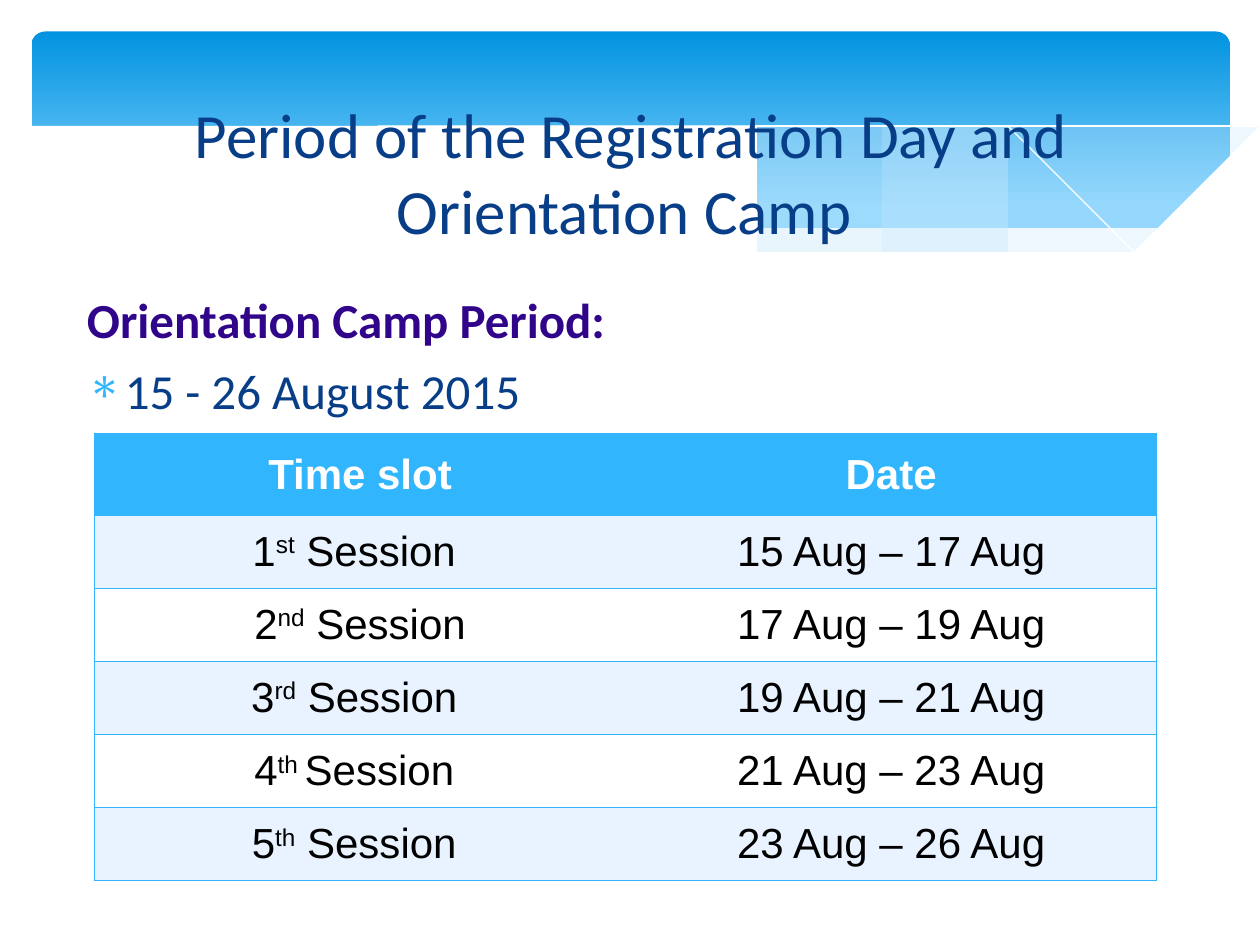
from lxml.etree import SubElement
from pptx import Presentation
from pptx.dml.color import RGBColor
from pptx.enum.shapes import MSO_SHAPE
from pptx.enum.text import MSO_ANCHOR, MSO_AUTO_SIZE, PP_ALIGN
from pptx.oxml.ns import qn
from pptx.util import Inches, Pt

HUES = {"deep": "0293E0", "pale": "83D3FE", "mist": "C6E7FC", "white": "FFFFFF",
        "navy": "073E87", "plum": "310589", "sky": "31B6FD", "ice": "E8F3FF",
        "black": "000000"}

FONTS = {
    "title": {"name": "Calibri", "size": Pt(36), "bold": False, "hue": "navy"},
    "lead": {"name": "Calibri", "size": Pt(28), "bold": True, "hue": "plum"},
    "item": {"name": "Calibri", "size": Pt(28), "bold": False, "hue": "navy"},
    "head": {"name": "Arial", "size": Pt(24), "bold": True, "hue": "white"},
    "cell": {"name": "Arial", "size": Pt(24), "bold": False, "hue": "black"},
}

FAN = [(9.76, 0.94), (9.35, 1.01), (8.61, 1.18), (7.79, 1.37), (7.06, 1.52), (6.61, 1.6)]
FAN_BASE = [(6.61, 1.6), (7.19, 1.67), (7.81, 1.72), (8.35, 1.72), (8.89, 1.66),
            (9.35, 1.56), (9.76, 1.41)]
BAND = [(8.93, 1.67), (8.37, 1.59), (7.41, 1.42), (6.29, 1.16), (5.41, 0.97),
        (4.65, 0.86), (3.99, 0.8), (3.44, 0.8), (2.86, 0.86)]
BAND_BASE = [(2.86, 0.86), (3.62, 0.97), (4.49, 1.16), (5.66, 1.43), (6.5, 1.58),
             (7.22, 1.68), (7.85, 1.72), (8.38, 1.72), (8.93, 1.67)]
ARC = [(3.09, 0.9), (3.53, 0.84), (4.16, 0.81), (4.89, 0.84), (5.82, 0.94),
       (6.95, 1.14), (7.95, 1.36), (9.07, 1.66)]
RISE = [(6.13, 1.51), (6.95, 1.3), (7.76, 1.11), (8.66, 0.93), (9.24, 0.84), (9.75, 0.8)]
SWELL = [(9.77, 1.41), (9.3, 1.57), (8.75, 1.67), (8.09, 1.71), (7.26, 1.67),
         (6.26, 1.53), (5.29, 1.33), (4.47, 1.14), (3.65, 0.96), (2.92, 0.85),
         (2.3, 0.79), (1.77, 0.78), (1.19, 0.82), (0.67, 0.91), (0.23, 1.07)]

ROWS = [
    (["Time slot"], "Date"),
    (["1", "st", " Session "], "15 Aug – 17 Aug"),
    (["2", "nd", " Session"], "17 Aug – 19 Aug"),
    (["3", "rd", " Session "], "19 Aug – 21 Aug"),
    (["4", "th ", "Session "], "21 Aug – 23 Aug"),
    (["5", "th", " Session "], "23 Aug – 26 Aug"),
]


def color(hue):
    """Return the named colour."""
    return RGBColor.from_string(HUES[hue])


def curve(knots, steps=6):
    """Return points of a smooth Catmull-Rom curve through the knots."""
    ends = [knots[0], *knots, knots[-1]]
    points = [knots[0]]
    for a, b, c, d in zip(ends, ends[1:], ends[2:], ends[3:]):
        for t in (n / steps for n in range(1, steps + 1)):
            points.append(tuple(
                (2 * q + (r - p) * t + (2 * p - 5 * q + 4 * r - s) * t ** 2
                 + (3 * q - p - 3 * r + s) * t ** 3) / 2
                for p, q, r, s in zip(a, b, c, d)))
    return points


class Deck:
    """Holds the style and the current slide."""

    def __init__(self):
        """Start a deck with one title and body slide."""
        self.file = Presentation()
        self.file.slide_width, self.file.slide_height = Inches(10), Inches(7.5)
        self.slide = self.file.slides.add_slide(self.file.slide_layouts[1])
        self.shapes = self.slide.shapes

    def run(self, para, text, style):
        """Add a styled run to a paragraph."""
        run = para.add_run()
        run.text = text
        for key, value in FONTS[style].items():
            if key == "hue":
                run.font.color.rgb = color(value)
            else:
                setattr(run.font, key, value)
        return run

    def banner(self, x, y, w, h):
        """Draw the rounded gradient banner."""
        box = self.shapes.add_shape(MSO_SHAPE.ROUNDED_RECTANGLE, *map(Inches, (x, y, w, h)))
        box.adjustments[0] = 0.07
        box.shadow.inherit = False
        box.line.fill.background()
        box.fill.gradient()
        box.fill.gradient_angle = 270
        for stop, hue, place in zip(box.fill.gradient_stops, ("deep", "pale"), (0, 0.9)):
            stop.color.rgb, stop.position = color(hue), place

    def outline(self, points, close):
        """Build a freeform through the points."""
        pen = self.shapes.build_freeform(*points[0], scale=Inches(1))
        pen.add_line_segments(points[1:], close=close)
        form = pen.convert_to_shape()
        form.shadow.inherit = False
        return form

    def wave(self, points, hue, alpha=100):
        """Draw a filled wave with the given opacity."""
        form = self.outline(points, True)
        form.line.fill.background()
        form.fill.solid()
        form.fill.fore_color.rgb = color(hue)
        tint = form.fill._xPr.find(qn("a:solidFill"))[0]
        SubElement(tint, qn("a:alpha"), val=str(alpha * 1000))

    def thread(self, points):
        """Draw a white hairline curve."""
        form = self.outline(points, False)
        form.fill.background()
        form.line.color.rgb = color("white")
        form.line.width = Pt(0)

    def place(self, holder, x, y, w, h):
        """Move a placeholder to the front and return its text frame."""
        self.shapes._spTree.append(holder._element)
        spots = {"left": x, "top": y, "width": w, "height": h}
        for key, value in spots.items():
            setattr(holder, key, Inches(value))
        frame = holder.text_frame
        frame.auto_size, frame.word_wrap = MSO_AUTO_SIZE.NONE, True
        return frame

    def title(self, text, *spot):
        """Fill the title, set low in its box."""
        frame = self.place(self.shapes.title, *spot)
        frame.vertical_anchor = MSO_ANCHOR.MIDDLE
        frame.margin_top = Inches(0.66)
        para = frame.paragraphs[0]
        para.alignment = PP_ALIGN.CENTER
        self.run(para, text, "title")

    def body(self, lead, item, *spot):
        """Fill the body with a lead line and a bulleted line."""
        frame = self.place(self.slide.placeholders[1], *spot)
        lines = ((frame.paragraphs[0], lead, "lead"), (frame.add_paragraph(), item, "item"))
        for para, text, style in lines:
            para.space_before = Pt(6.7)
            self.run(para, text, style)
            props = para._p.get_or_add_pPr()
            props.set("marL", str(Inches(0.3)))
            props.set("indent", str(-Inches(0.3)))
            if style == "lead":
                SubElement(props, qn("a:buNone"))
            else:
                tint = SubElement(props, qn("a:buClr"))
                SubElement(tint, qn("a:srgbClr"), val=HUES["sky"])
                SubElement(props, qn("a:buFont"), typeface="Symbol")
                SubElement(props, qn("a:buChar"), char="∗")

    def border(self, cell, sides):
        """Rule the given sides of a cell and clear the others."""
        props = cell._tc.get_or_add_tcPr()
        for side in "LRTB":
            line = SubElement(props, qn(f"a:ln{side}"), w=str(Pt(1)))
            if side in sides:
                fill = SubElement(line, qn("a:solidFill"))
                SubElement(fill, qn("a:srgbClr"), val=HUES["sky"])
            else:
                SubElement(line, qn("a:noFill"))

    def table(self, rows, x, y, w, heights):
        """Draw the table of sessions and dates."""
        size = map(Inches, (x, y, w, sum(heights)))
        grid = self.shapes.add_table(len(rows), 2, *size).table
        for r, (slot, date) in enumerate(rows):
            grid.rows[r].height = Inches(heights[r])
            hue = "sky" if r == 0 else ("white", "ice")[r % 2]
            for c, parts in enumerate((slot, [date])):
                cell = grid.cell(r, c)
                cell.vertical_anchor = MSO_ANCHOR.MIDDLE
                self.border(cell, "TB" + "LR"[c])
                cell.fill.solid()
                cell.fill.fore_color.rgb = color(hue)
                para = cell.text_frame.paragraphs[0]
                para.alignment = PP_ALIGN.CENTER
                for n, part in enumerate(parts):
                    run = self.run(para, part, "cell" if r else "head")
                    if n == 1:
                        run.font._element.set("baseline", "30000")


def main():
    """Build and save the slide."""
    deck = Deck()
    deck.banner(0.25, 0.25, 9.51, 1.56)
    deck.wave(curve(FAN) + curve(FAN_BASE), "mist", 29)
    deck.wave(curve(BAND) + curve(BAND_BASE), "mist", 40)
    deck.thread(curve(ARC))
    deck.thread(curve(RISE))
    deck.wave(curve(SWELL) + [(0.23, 2.24), (9.77, 2.24)], "white")
    deck.body("Orientation Camp Period:", "15 - 26 August 2015", 0.59, 2.25, 8.58, 5.09)
    deck.title("Period of the Registration Day and Orientation Camp ", 0.51, 0.37, 9, 1.37)
    deck.table(ROWS, 0.75, 3.44, 8.43, [0.65] + [0.58] * 5)
    deck.file.save("out.pptx")


if __name__ == "__main__":
    main()
